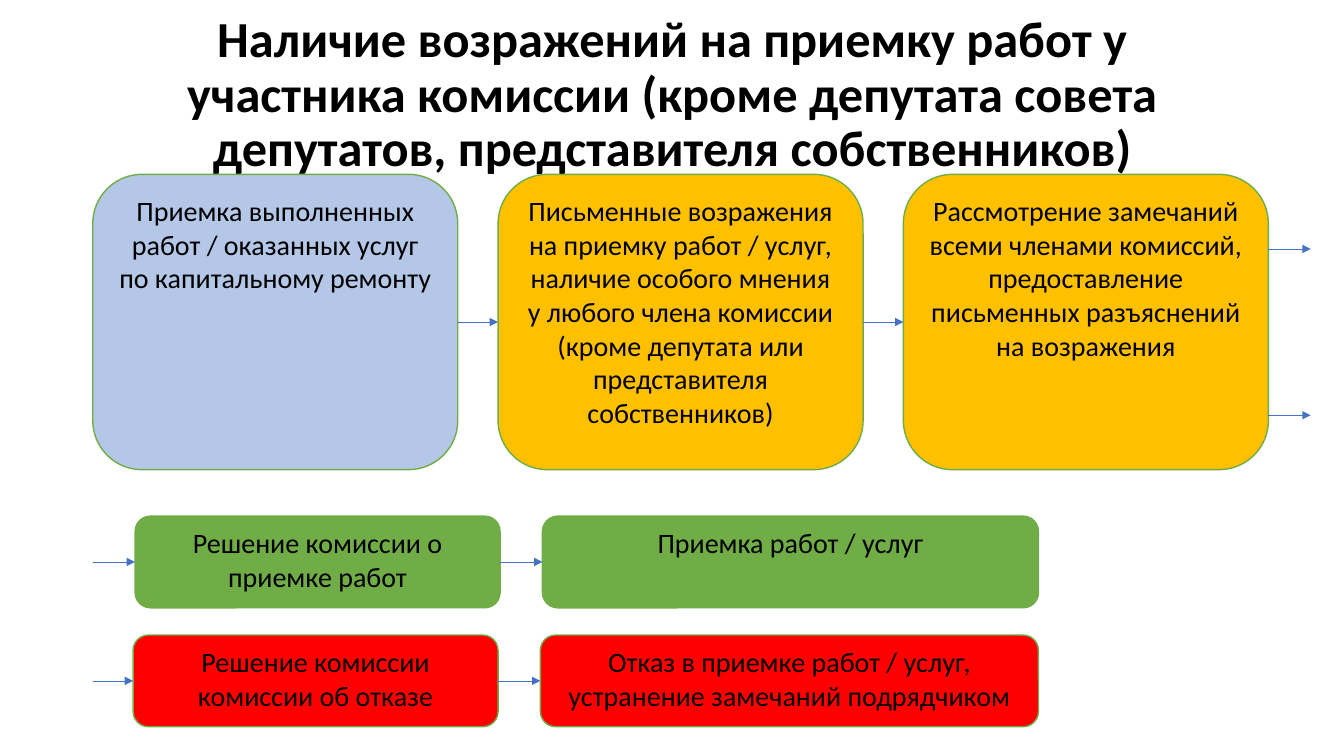
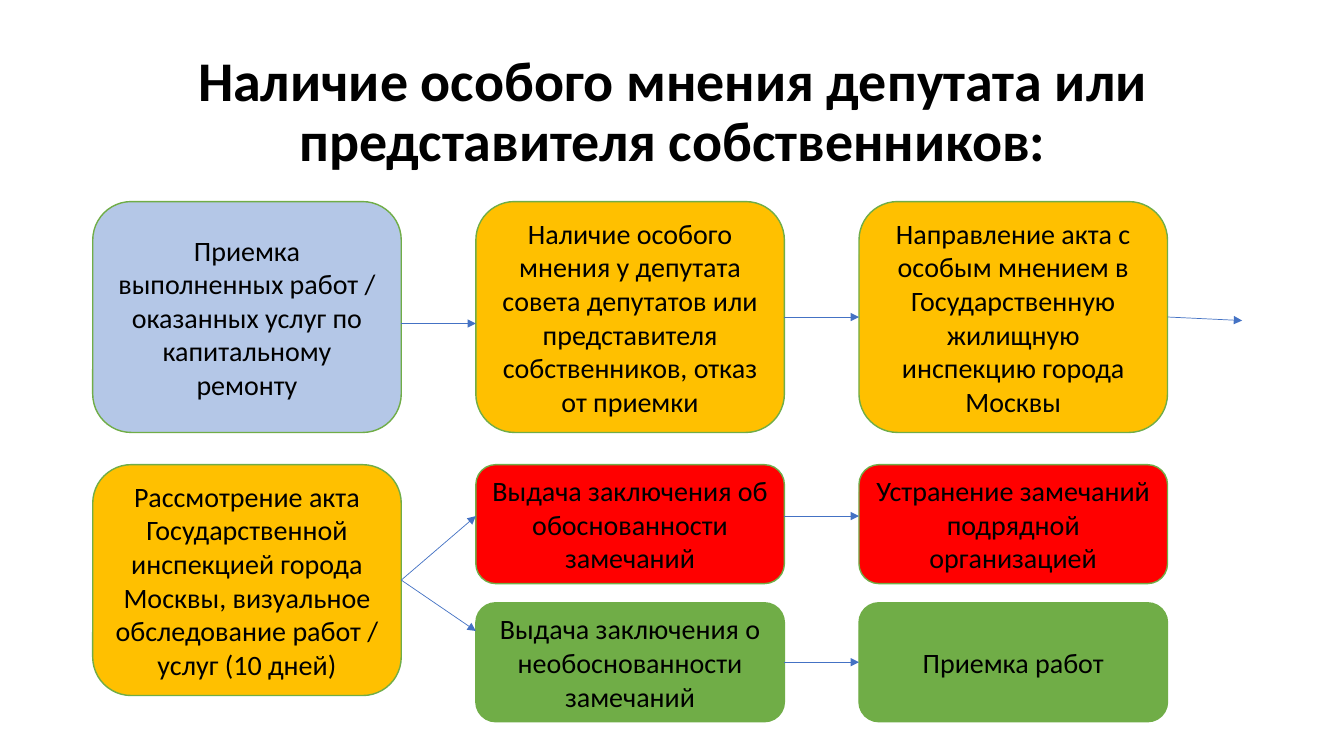
from dataclasses import dataclass

from lxml import etree
from pptx import Presentation
from pptx import util as u
from pptx.dml.color import RGBColor
from pptx.enum import shapes, text
from pptx.oxml import ns

COLORS = {
    "start": "B4C7E7",
    "review": "FFC000",
    "accept": "70AD47",
    "reject": "FF0000",
    "border": "70AD47",
    "arrow": "4472C4",
    "text": "000000",
}
FONT = "Calibri"
MARGIN = 0.92
JOIN_TOLERANCE = 0.05
LEFT_SITE, RIGHT_SITE = 1, 3


@dataclass(frozen=True)
class Title:
    wording: str
    top: float
    height: float
    size: int


@dataclass(frozen=True)
class Box:
    wording: str
    color: str
    left: float
    top: float
    width: float
    height: float

    @property
    def right(self) -> float:
        return self.left + self.width

    @property
    def middle(self) -> float:
        return self.top + self.height / 2


@dataclass(frozen=True)
class Arrow:
    start_x: float
    start_y: float
    end_x: float
    end_y: float


def color(name: str) -> RGBColor:
    return RGBColor.from_string(COLORS[name])


def write(frame, wording: str, size: int, anchor, bold: bool = False) -> None:
    frame.text = wording
    frame.word_wrap = True
    frame.vertical_anchor = anchor
    paragraph = frame.paragraphs[0]
    paragraph.alignment = text.PP_ALIGN.CENTER
    font = paragraph.runs[0].font
    font.name = FONT
    font.size = u.Pt(size)
    font.bold = bold
    font.color.rgb = color("text")


def draw_title(slide, title: Title) -> None:
    shape = slide.shapes.add_textbox(
        u.Inches(MARGIN), u.Inches(title.top), u.Inches(11.5), u.Inches(title.height)
    )
    write(shape.text_frame, title.wording, title.size, text.MSO_ANCHOR.MIDDLE, True)
    shape.text_frame.paragraphs[0].line_spacing = 0.9


def draw_box(slide, box: Box, anchor):
    shape = slide.shapes.add_shape(
        shapes.MSO_SHAPE.ROUNDED_RECTANGLE,
        u.Inches(box.left), u.Inches(box.top), u.Inches(box.width), u.Inches(box.height),
    )
    shape.shadow.inherit = False
    shape.fill.solid()
    shape.fill.fore_color.rgb = color(box.color)
    shape.line.color.rgb = color("border")
    shape.line.width = u.Pt(1)
    write(shape.text_frame, box.wording, 20, anchor)
    return shape


def meets(x: float, y: float, side: float, middle: float) -> bool:
    return abs(x - side) <= JOIN_TOLERANCE and abs(y - middle) <= JOIN_TOLERANCE


def draw_arrow(slide, arrow: Arrow, drawn_boxes: list) -> None:
    connector = slide.shapes.add_connector(
        shapes.MSO_CONNECTOR.STRAIGHT,
        u.Inches(arrow.start_x), u.Inches(arrow.start_y),
        u.Inches(arrow.end_x), u.Inches(arrow.end_y),
    )
    connector.line.color.rgb = color("arrow")
    connector.line.width = u.Pt(0.5)
    line = connector.line._get_or_add_ln()
    etree.SubElement(line, ns.qn("a:tailEnd"), type="triangle")
    etree.SubElement(connector._element.spPr, ns.qn("a:effectLst"))
    for box, shape in drawn_boxes:
        if meets(arrow.start_x, arrow.start_y, box.right, box.middle):
            connector.begin_connect(shape, RIGHT_SITE)
        if meets(arrow.end_x, arrow.end_y, box.left, box.middle):
            connector.end_connect(shape, LEFT_SITE)


def draw_slide(presentation, title: Title, boxes: list[Box], arrows: list[Arrow], anchor) -> None:
    slide = presentation.slides.add_slide(presentation.slide_layouts[6])
    draw_title(slide, title)
    drawn_boxes = [(box, draw_box(slide, box, anchor)) for box in boxes]
    for arrow in arrows:
        draw_arrow(slide, arrow, drawn_boxes)


def level_arrow(left: float, y: float, length: float) -> Arrow:
    return Arrow(left, y, left + length, y)


def draw_commission_objections(presentation) -> None:
    width, height, top, pitch, gap = 3.62, 2.93, 1.73, 4.02, 0.42
    steps = [
        ("Приемка выполненных работ / оказанных услуг по капитальному ремонту", "start"),
        ("Письменные возражения на приемку работ / услуг, наличие особого мнения "
         "у любого члена комиссии (кроме депутата или представителя собственников)", "review"),
        ("Рассмотрение замечаний всеми членами комиссий, предоставление "
         "письменных разъяснений на возражения", "review"),
    ]
    outcomes = [
        ("Решение комиссии о приемке работ", "Приемка работ / услуг", "accept", 1.34, 5.12),
        ("Решение комиссии комиссии об отказе",
         "Отказ в приемке работ / услуг, устранение замечаний подрядчиком", "reject", 1.32, 6.3),
    ]
    boxes = [
        Box(wording, fill, MARGIN + index * pitch, top, width, height)
        for index, (wording, fill) in enumerate(steps)
    ]
    arrows = [
        level_arrow(boxes[index].right, y, gap)
        for index, y in [(0, 3.21), (1, 3.16), (2, 2.47), (2, 4.12)]
    ]
    for decision, result, fill, left, row_top in outcomes:
        decision_box = Box(decision, fill, left, row_top, width, 0.91)
        result_left = decision_box.right + gap
        boxes += [decision_box, Box(result, fill, result_left, row_top, 10.3 - result_left, 0.91)]
        arrows += [
            level_arrow(start, decision_box.middle, gap)
            for start in (MARGIN, decision_box.right)
        ]
    title = Title(
        "Наличие возражений на приемку работ у участника комиссии "
        "(кроме депутата совета депутатов, представителя собственников)", 0.34, 1.22, 36,
    )
    draw_slide(presentation, title, boxes, arrows, text.MSO_ANCHOR.TOP)


def draw_separate_opinion(presentation) -> None:
    width, pitch = 3.06, 3.8
    tall, short = 2.29, 1.18
    first_row, second_row, third_row = 2, 4.61, 5.98
    cells = [
        ("Приемка выполненных работ / оказанных услуг по капитальному ремонту",
         "start", 0, first_row, tall),
        ("Наличие особого мнения у депутата совета депутатов или представителя "
         "собственников, отказ от приемки", "review", 1, first_row, tall),
        ("Направление акта с особым мнением в Государственную жилищную "
         "инспекцию города Москвы", "review", 2, first_row, tall),
        ("Рассмотрение акта Государственной инспекцией города Москвы, "
         "визуальное обследование работ / услуг (10 дней)", "review", 0, second_row, tall),
        ("Выдача заключения об обоснованности замечаний", "reject", 1, second_row, short),
        ("Устранение замечаний подрядной организацией", "reject", 2, second_row, short),
        ("Выдача заключения о необоснованности замечаний", "accept", 1, third_row, short),
        ("Приемка работ", "accept", 2, third_row, short),
    ]
    boxes = [
        Box(wording, fill, MARGIN + column * pitch, top, width, height)
        for wording, fill, column, top, height in cells
    ]
    links = [
        (0, 3.21, 3.21), (1, 3.18, 3.18), (2, 3.18, 3.18),
        (0, 5.76, 5.12), (0, 5.79, 6.26), (1, 5.12, 5.12), (1, 6.53, 6.53),
    ]
    arrows = [
        Arrow(MARGIN + column * pitch + width, start_y, MARGIN + (column + 1) * pitch, end_y)
        for column, start_y, end_y in links
    ]
    title = Title(
        "Наличие особого мнения депутата или представителя собственников:", 0.4, 1.45, 40
    )
    draw_slide(presentation, title, boxes, arrows, text.MSO_ANCHOR.MIDDLE)


def main() -> None:
    presentation = Presentation()
    presentation.slide_width = u.Inches(13.33)
    presentation.slide_height = u.Inches(7.5)
    draw_commission_objections(presentation)
    draw_separate_opinion(presentation)
    presentation.save("out.pptx")


if __name__ == "__main__":
    main()
